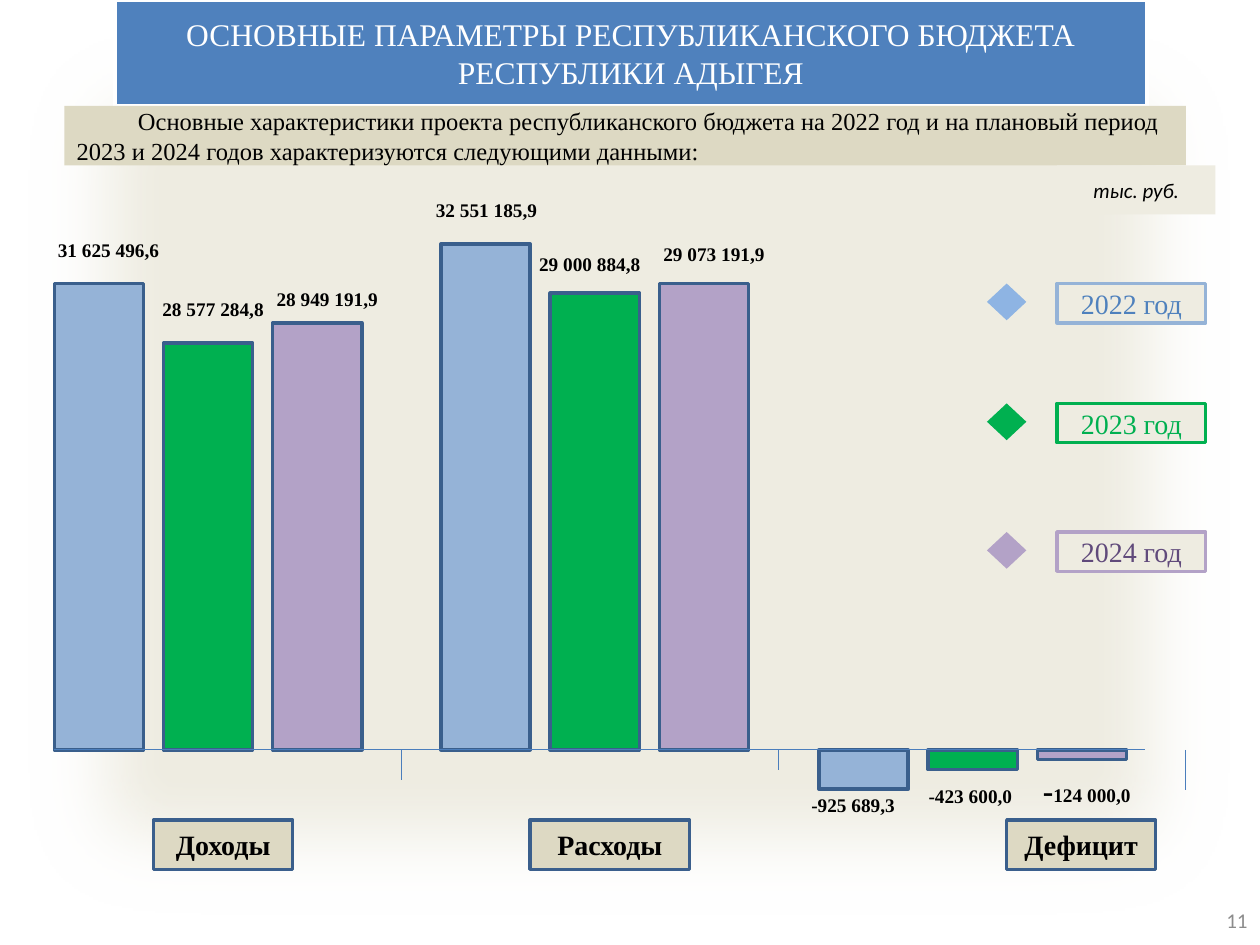
from dataclasses import dataclass

from lxml import etree
from pptx import Presentation
from pptx.dml.color import RGBColor
from pptx.enum import shapes as kinds, text as txt
from pptx.oxml import ns
from pptx.util import Pt


@dataclass(frozen=True)
class Theme:
    serif: str = "Times New Roman"
    sans: str = "Calibri"
    paper: str = "EEECE1"
    sand: str = "DDD9C3"
    edge: str = "3A5F8C"
    axis: str = "4B7EBC"
    blue: str = "4F81BD"
    white: str = "FFFFFF"
    black: str = "000000"
    gray: str = "8C8C8C"
    bars: tuple = ("95B3D7", "00B050", "B3A2C7")
    gems: tuple = ("8EB4E3", "00B050", "B3A2C7")
    years: tuple = ("4F81BD", "00B050", "604A7B")
    head: int = 18
    name: int = 16
    body: int = 14
    note: int = 12
    tag: int = 11


T = Theme()
CENTER = txt.PP_ALIGN.CENTER
BASE = 428.5
WIDE, STEP = 51, 62.4


def rgb(code):
    return RGBColor.from_string(code)


def paint(shape, fill=None, line=None, width=2):
    if fill:
        shape.fill.solid()
        shape.fill.fore_color.rgb = rgb(fill)
    if line:
        shape.line.color.rgb = rgb(line)
        shape.line.width = Pt(width)
    else:
        shape.line.fill.background()


def write(shape, runs, color=T.black, font=T.serif, align=CENTER, pad=7.2,
          bold=False, italic=False):
    """Fill a shape with one paragraph of (words, size) runs."""
    frame = shape.text_frame
    frame.word_wrap = True
    frame.vertical_anchor = txt.MSO_ANCHOR.MIDDLE
    frame.margin_left = frame.margin_right = Pt(pad)
    frame.margin_top = frame.margin_bottom = Pt(min(pad, 3.6))
    para = frame.paragraphs[0]
    para.alignment = align
    for words, size in runs:
        run = para.add_run()
        run.text = words
        run.font.name, run.font.size = font, Pt(size)
        run.font.bold, run.font.italic = bold, italic
        run.font.color.rgb = rgb(color)
    return para


def block(slide, box, fill, line=None, kind=kinds.MSO_SHAPE.RECTANGLE):
    shape = slide.shapes.add_shape(kind, *map(Pt, box))
    shape.shadow.inherit = False
    paint(shape, fill, line)
    return shape


def label(slide, box, runs, **style):
    area = slide.shapes.add_textbox(*map(Pt, box))
    write(area, runs, **style)


def rule(slide, x1, y1, x2, y2):
    line = slide.shapes.add_connector(
        kinds.MSO_CONNECTOR.STRAIGHT, *map(Pt, (x1, y1, x2, y2)))
    line.line.color.rgb = rgb(T.axis)
    line.line.width = Pt(0.75)
    etree.SubElement(line.element.spPr, ns.qn("a:effectLst"))


def backdrop(slide, box):
    """Soft-edged panel placed behind the title."""
    panel = block(slide, box, T.paper)
    effects = panel.element.spPr.find(ns.qn("a:effectLst"))
    etree.SubElement(effects, ns.qn("a:softEdge"), rad=str(Pt(50)))
    slide.shapes.title.element.addprevious(panel.element)


def heading(slide, box):
    title = slide.shapes.title
    title.left, title.top, title.width, title.height = map(Pt, box)
    paint(title, T.blue, T.white, 2.25)
    write(title, [("ОСНОВНЫЕ ПАРАМЕТРЫ РЕСПУБЛИКАНСКОГО БЮДЖЕТА "
                   "РЕСПУБЛИКИ АДЫГЕЯ", T.head)], T.white)


def intro(slide, box):
    words = ("Основные характеристики проекта республиканского бюджета "
             "на 2022 год и на плановый период 2023 и 2024 годов "
             "характеризуются следующими данными:")
    para = write(block(slide, box, T.sand), [(words, T.body)],
                 align=txt.PP_ALIGN.LEFT)
    para._p.get_or_add_pPr().set("indent", str(Pt(35)))


def group(slide, left, sizes, tags, name, plate):
    """Three bars on the base line, their values and the group's name plate.

    A negative size hangs below the line; a tag is (centre x, centre y, runs).
    """
    for i, (size, fill) in enumerate(zip(sizes, T.bars)):
        top = BASE - max(size, 0)
        block(slide, (left + i * STEP, top, WIDE, abs(size)), fill, T.edge)
    for x, y, runs in tags:
        label(slide, (x - 38, y - 9, 76, 18), runs, pad=0, bold=True)
    write(block(slide, plate, T.sand, T.edge), [(name, T.name)], bold=True)


def axis(slide, left, right, ticks):
    rule(slide, left, BASE, right, BASE)
    for x, drop in ticks:
        rule(slide, x, BASE, x, BASE + drop)


def legend(slide, left, tops):
    rows = zip((2022, 2023, 2024), tops, T.gems, T.bars, T.years)
    for year, top, gem, edge, color in rows:
        block(slide, (left, top, 22.5, 21), gem,
              kind=kinds.MSO_SHAPE.DIAMOND)
        plate = block(slide, (left + 40, top, 85, 22.5), T.paper, edge)
        write(plate, [(f"{year} год", T.name)], color)


def main():
    deck = Presentation()
    deck.slide_width, deck.slide_height = Pt(720), Pt(540)
    slide = deck.slides.add_slide(deck.slide_layouts[5])

    backdrop(slide, (0, 0, 720, 540))
    heading(slide, (65.5, 0, 590, 60.5))
    intro(slide, (36.75, 60.5, 641, 34))
    unit = block(slide, (604, 94.5, 90.5, 28), T.paper)
    write(unit, [("тыс. руб.", T.note)], font=T.sans, italic=True)

    group(slide, 31, (266.5, 232.5, 244),
          [(62, 142.5, [("31 625 496,6", T.tag)]),
           (121.75, 176.5, [("28 577 284,8", T.tag)]),
           (187, 171, [("28 949 191,9", T.tag)])],
          "Доходы", (87.75, 468.5, 79.5, 28.25))
    group(slide, 252, (289, 261, 266.5),
          [(278, 120, [("32 551 185,9", T.tag)]),
           (337, 151, [("29 000 884,8", T.tag)]),
           (408, 145, [("29 073 191,9", T.tag)])],
          "Расходы", (303, 468.5, 91, 28.25))
    group(slide, 468, (-22.5, -11.25, -5.6),
          [(487.5, 460, [("-925 689,3", T.tag)]),
           (554.5, 454.5, [("-423 600,0", T.tag)]),
           (621, 451.5, [("-", T.head), ("124 000,0", T.tag)])],
          "Дефицит", (575.25, 468.5, 85, 28.25))
    axis(slide, 31, 654.5, [(229.5, 17), (445, 11.5), (677.5, 23)])
    legend(slide, 564, (162, 230.5, 304))

    label(slide, (552, 511, 168, 29), [("11", T.note)], color=T.gray,
          font=T.sans, align=txt.PP_ALIGN.RIGHT)
    deck.save("out.pptx")


if __name__ == "__main__":
    main()
